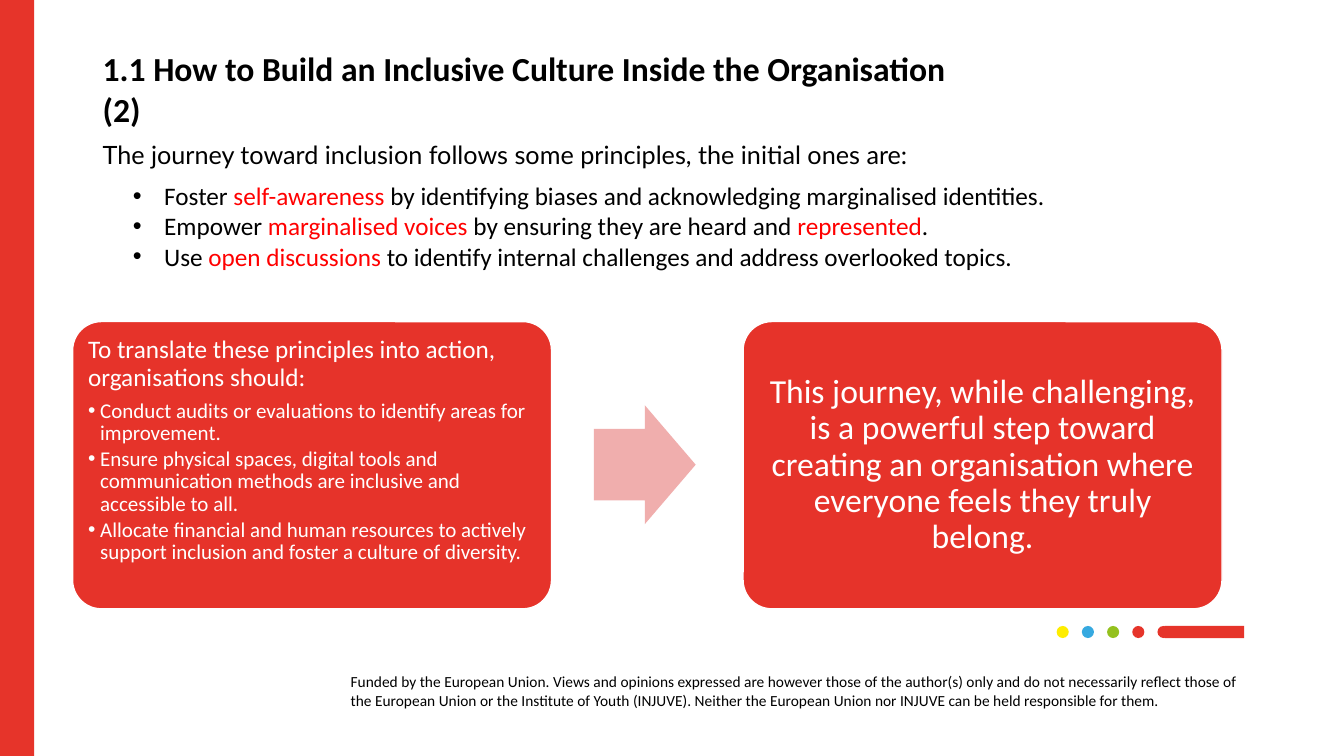
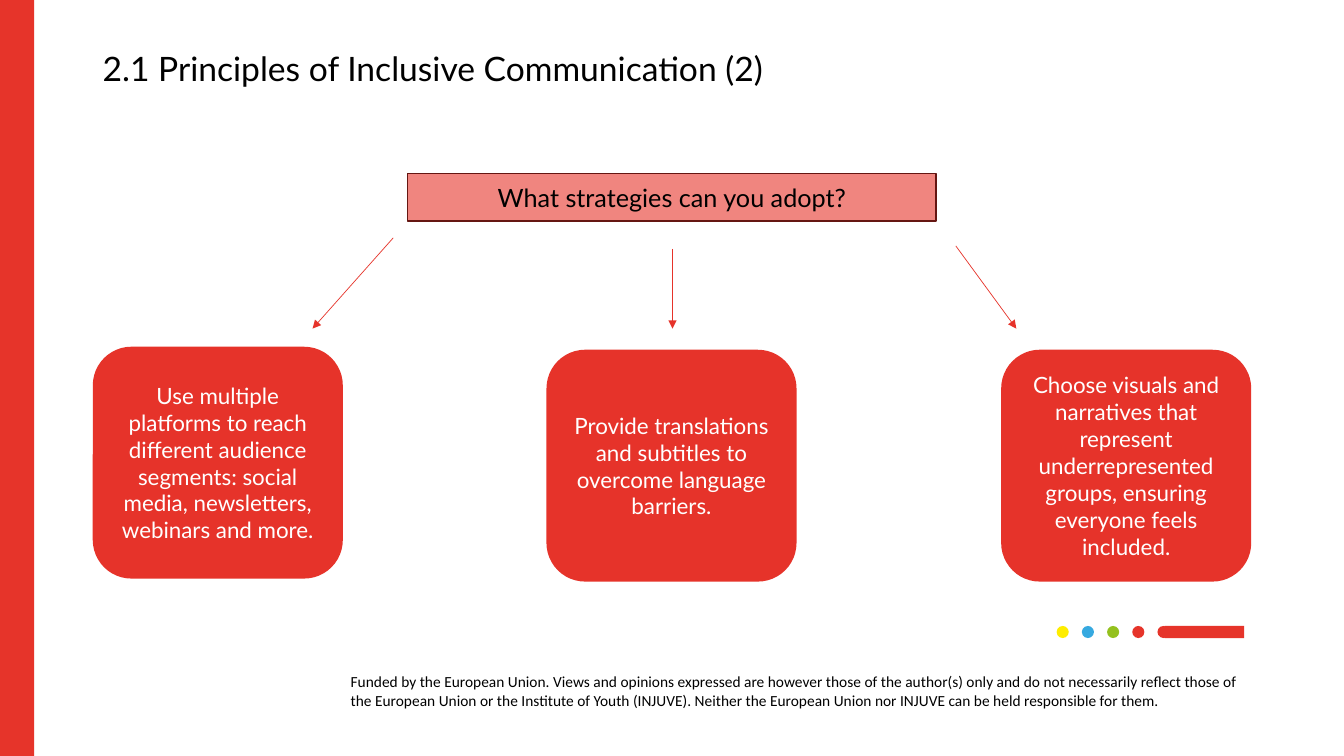
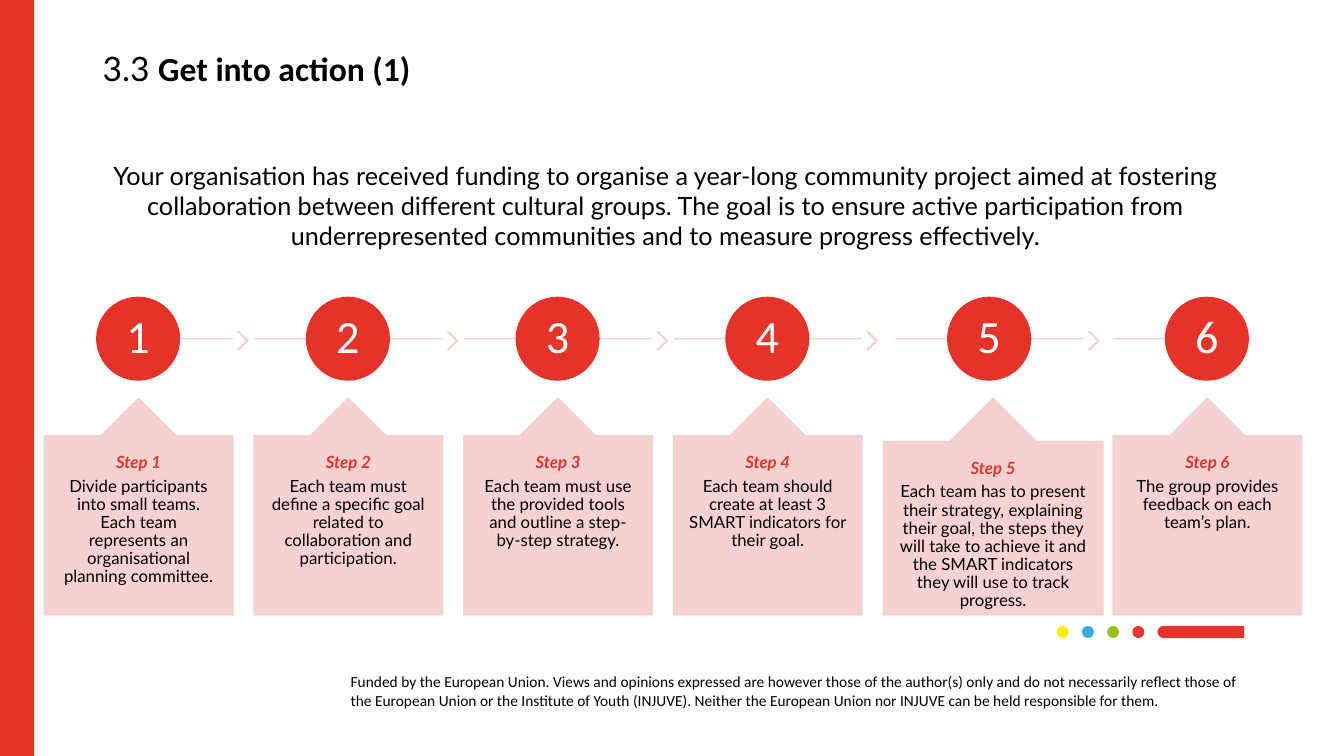
"""Builds three slides of a training deck on inclusive organisations."""
from lxml.etree import SubElement
from pptx import Presentation
from pptx.dml.color import RGBColor
from pptx.enum.shapes import MSO_CONNECTOR as Connector, MSO_SHAPE as Shape
from pptx.enum.text import MSO_ANCHOR as Anchor, PP_ALIGN as Align
from pptx.oxml.ns import qn
from pptx.util import Pt

SCALE = 9144
COLORS = {
    "red": "E6332A", "band": "E6342A", "green": "94C11E", "blue": "36A9E0",
    "yellow": "FEED00", "accent": "FF0000", "salmon": "F0857F",
    "maroon": "651612", "rose": "F0AEAD", "blush": "F5CECD",
    "black": "000000", "white": "FFFFFF",
}
FUNDING = (
    "Funded by the European Union. Views and opinions expressed are however those of the "
    "author(s) only and do not necessarily reflect those of the European Union or the Institute "
    "of Youth (INJUVE). Neither the European Union nor INJUVE can be held responsible for them."
)


def px(length):
    return length * SCALE


def rgb(name):
    return RGBColor.from_string(COLORS[name])


def write(paragraph, content, size=18, font="Calibri", color="black", bold=False, italic=False,
          align=Align.LEFT, spacing=None, after=0, bullet=None):
    if bullet:
        left, hang = bullet
        properties = paragraph._p.get_or_add_pPr()
        properties.set("marL", str(px(left)))
        properties.set("indent", str(-px(hang)))
        SubElement(properties, qn("a:buFont")).set("typeface", "Arial")
        SubElement(properties, qn("a:buChar")).set("char", "•")
    paragraph.alignment = align
    paragraph.space_after = Pt(after)
    if spacing:
        paragraph.line_spacing = spacing
    for part in [content] if isinstance(content, str) else content:
        words, changes = (part, {}) if isinstance(part, str) else part
        look = {"size": size, "font": font, "color": color, "bold": bold, "italic": italic} | changes
        run = paragraph.add_run()
        run.text = words
        run.font.size = Pt(look["size"])
        run.font.name = look["font"]
        run.font.bold = look["bold"]
        run.font.italic = look["italic"]
        run.font.color.rgb = rgb(look["color"])


class Deck:
    """Holds the shared style and the current slide."""

    def __init__(self):
        self.file = Presentation()
        self.file.slide_width, self.file.slide_height = px(1333), px(750)
        self.slide = None

    def start(self, title, width=877, **look):
        self.slide = self.file.slides.add_slide(self.file.slide_layouts[6])
        self.shape(Shape.RECTANGLE, 0, 0, 34, 750, "band")
        self.shape(Shape.RECTANGLE, 1155, 621, 79, 12, "band")
        for i, color in enumerate(["yellow", "blue", "green", "band", "band"]):
            self.shape(Shape.OVAL, 1048 + 25 * i, 621, 12, 12, color)
        self.text(338, 662, 903, 47, [(FUNDING, {"size": 11})])
        self.text(92, 43, width, 71, [(title, {"size": 24} | look)])

    def fill_frame(self, frame, paragraphs, anchor, inset):
        frame.word_wrap = True
        frame.vertical_anchor = anchor
        across, down = inset
        frame.margin_left = frame.margin_right = px(across)
        frame.margin_top = frame.margin_bottom = px(down)
        for i, (content, look) in enumerate(paragraphs):
            write(frame.add_paragraph() if i else frame.paragraphs[0], content, **look)

    def text(self, left, top, width, height, paragraphs):
        box = self.slide.shapes.add_textbox(px(left), px(top), px(width), px(height))
        self.fill_frame(box.text_frame, paragraphs, Anchor.TOP, (10, 5))

    def soften(self, item, opacity):
        for color in list(item.element.spPr.iter(qn("a:srgbClr"))):
            SubElement(color, qn("a:alpha")).set("val", str(opacity * 1000))

    def shape(self, kind, left, top, width, height, fill, line=None, adjust=(), opacity=100,
              paragraphs=(), anchor=Anchor.MIDDLE, inset=(10, 5)):
        item = self.slide.shapes.add_shape(kind, px(left), px(top), px(width), px(height))
        item.shadow.inherit = False
        item.fill.solid()
        item.fill.fore_color.rgb = rgb(fill)
        if line:
            item.line.color.rgb = rgb(line)
            item.line.width = Pt(1)
        else:
            item.line.fill.background()
        for i, value in enumerate(adjust):
            item.adjustments[i] = value
        if opacity < 100:
            self.soften(item, opacity)
        if paragraphs:
            self.fill_frame(item.text_frame, paragraphs, anchor, inset)

    def line(self, start, end, color, width, opacity=100, arrow=False):
        item = self.slide.shapes.add_connector(Connector.STRAIGHT, *map(px, start + end))
        item.line.color.rgb = rgb(color)
        item.line.width = Pt(width)
        if arrow:
            SubElement(item.element.spPr.find(qn("a:ln")), qn("a:tailEnd")).set("type", "triangle")
        if opacity < 100:
            self.soften(item, opacity)
        SubElement(item.element.spPr, qn("a:effectLst"))


def culture_slide(deck):
    deck.start("1.1 How to Build an Inclusive Culture Inside the Organisation (2)", bold=True)
    deck.text(92, 133, 844, 40, [
        ("The journey toward inclusion follows some principles, the initial ones are:", {"font": "Lato"}),
    ])
    accent = {"color": "accent"}
    principles = [
        ["Foster ", ("self-awareness", accent),
         " by identifying biases and acknowledging marginalised identities."],
        ["Empower ", ("marginalised voices ", accent), "by ensuring they are heard and ",
         ("represented", accent), "."],
        ["Use ", ("open discussions ", accent),
         "to identify internal challenges and address overlooked topics."],
    ]
    deck.text(72, 174, 1141, 101, [(words, {"bullet": (81, 31)}) for words in principles])

    white = {"color": "white", "spacing": 0.9}
    actions = [
        "Conduct audits or evaluations to identify areas for improvement.",
        "Ensure physical spaces, digital tools and communication methods are inclusive and "
        "accessible to all.",
        "Allocate financial and human resources to actively support inclusion and foster a "
        "culture of diversity.",
    ]
    action_list = [("To translate these principles into action, organisations should:",
                    white | {"after": 6})]
    action_list += [(words, white | {"size": 15, "after": 2, "bullet": (12, 12)}) for words in actions]
    outcome = [("This journey, while challenging, is a powerful step toward creating an "
                "organisation where everyone feels they truly belong.",
                white | {"size": 24, "align": Align.CENTER})]
    for left, paragraphs, anchor, inset in [(72, action_list, Anchor.TOP, 7),
                                            (737, outcome, Anchor.MIDDLE, 10)]:
        deck.shape(Shape.ROUNDED_RECTANGLE, left, 319, 475, 285, "red", "white", adjust=[0.1],
                   paragraphs=paragraphs, anchor=anchor, inset=(inset, inset))
    deck.shape(Shape.RIGHT_ARROW, 589, 402, 101, 118, "rose", adjust=[0.6, 0.5])


def communication_slide(deck):
    deck.start("2.1 Principles of Inclusive Communication (2)", font="Lato")
    centred = {"font": "Lato", "align": Align.CENTER}
    deck.shape(Shape.MATH_MINUS, 310, 95, 713, 201, "salmon", "maroon",
               paragraphs=[("What strategies can you adopt?", centred)])
    strategies = [
        (92, 344, (390, 236), (310, 326),
         "Use multiple platforms to reach different audience segments: social media, newsletters, "
         "webinars and more."),
        (542, 347, (667, 247), (667, 326),
         "Provide translations and subtitles to overcome language barriers."),
        (993, 347, (948, 244), (1008, 326),
         "Choose visuals and narratives that represent underrepresented groups, ensuring everyone "
         "feels included."),
    ]
    for left, top, start, end, words in strategies:
        deck.shape(Shape.ROUNDED_RECTANGLE, left, top, 248, 230, "red",
                   paragraphs=[(words, centred | {"size": 16, "color": "white"})])
        deck.line(start, end, "red", 0.5, arrow=True)


def action_slide(deck):
    deck.start([("3.3 ", {"font": "Lato", "bold": False}), "Get into action (1)"], 916, bold=True)
    centred = {"font": "Lato", "align": Align.CENTER}
    deck.text(44, 154, 1232, 101, [
        ("Your organisation has received funding to organise a year-long community project aimed "
         "at fostering collaboration between different cultural groups. The goal is to ensure "
         "active participation from underrepresented communities and to measure progress "
         "effectively.", centred),
    ])
    card_text = centred | {"size": 12, "spacing": 0.9, "after": 4}
    steps = [
        (44, 44, 187, "Divide participants into small teams. Each team represents an "
                      "organisational planning committee."),
        (252, 252, 187, "Each team must define a specific goal related to collaboration and "
                        "participation."),
        (460, 460, 187, "Each team must use the provided tools and outline a step-by-step strategy."),
        (668, 668, 187, "Each team should create at least 3 SMART indicators for their goal."),
        (888, 876, 218, "Each team has to present their strategy, explaining their goal, the steps "
                        "they will take to achieve it and the SMART indicators they will use to "
                        "track progress."),
        (1104, 1104, 187, "The group provides feedback on each team’s plan."),
    ]
    for number, (track, card, width, words) in enumerate(steps, 1):
        first, last = number == 1, number == len(steps)
        middle = track + 94
        deck.line((middle if first else track, 336), (middle if last else track + 187, 336),
                  "blush", 1, opacity=90)
        if not last:
            deck.shape(Shape.CHEVRON, track + 192, 329, 10, 18, "blush", "blush", [0.9], 90)
        deck.shape(Shape.OVAL, track + 52, 295, 82, 82, "red", "red", inset=(3, 3), paragraphs=[
            (str(number), {"size": 33, "color": "white", "align": Align.CENTER, "spacing": 0.9}),
        ])
        deck.shape(Shape.UP_ARROW_CALLOUT, card, 395, width, 215, "blush", "blush",
                   [0.5, 0.2, 0.2, 1], 90, anchor=Anchor.TOP, inset=(15, 18), paragraphs=[
                       (f"Step {number}", card_text | {"color": "red", "bold": True, "italic": True}),
                       (words, card_text),
                   ])


def main():
    deck = Deck()
    culture_slide(deck)
    communication_slide(deck)
    action_slide(deck)
    deck.file.save("out.pptx")


if __name__ == "__main__":
    main()
